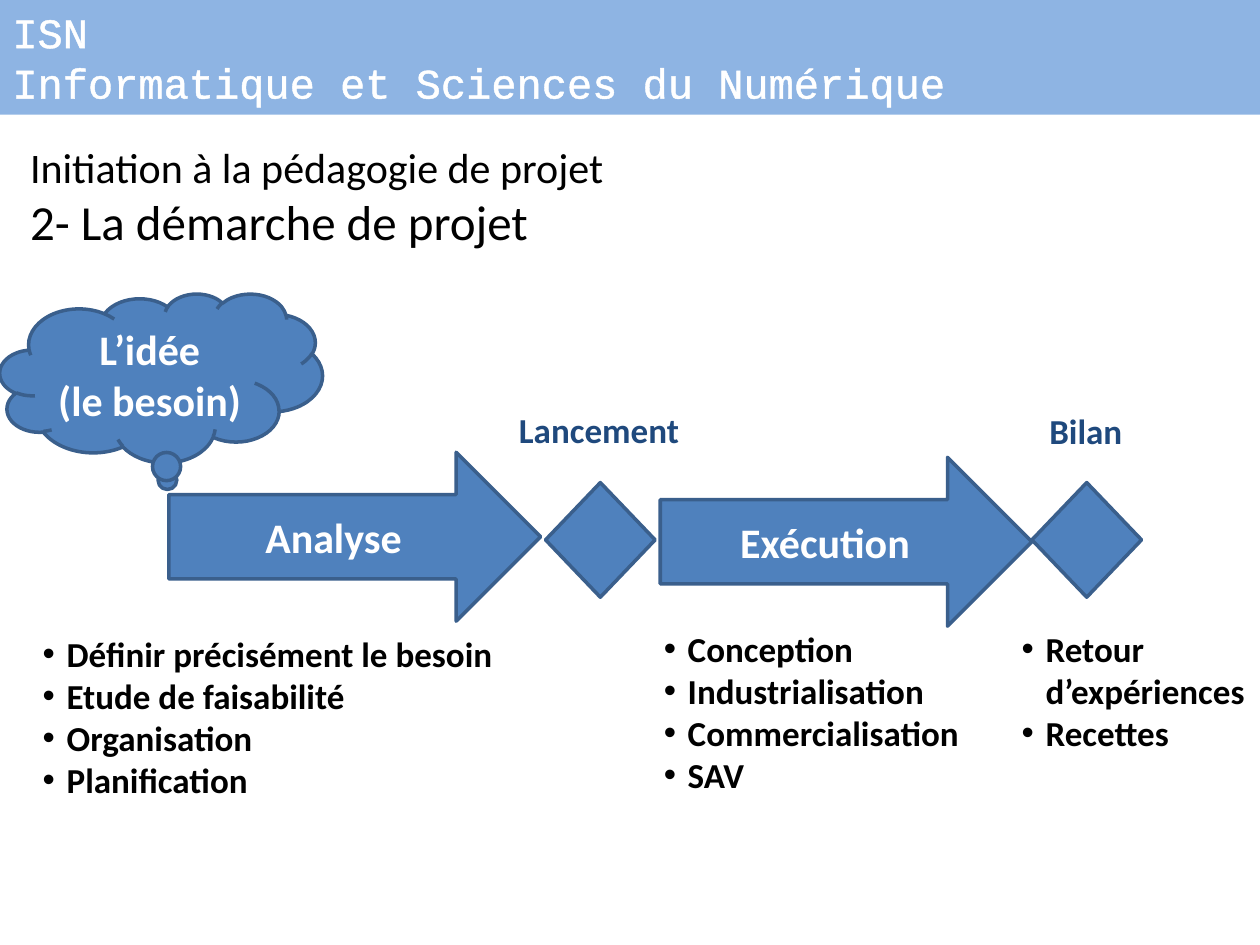
from dataclasses import dataclass
from lxml import etree
from pptx import Presentation
from pptx.dml.color import RGBColor
from pptx.enum.shapes import MSO_SHAPE
from pptx.enum.text import MSO_ANCHOR, MSO_AUTO_SIZE, PP_ALIGN
from pptx.oxml.ns import qn
from pptx.util import Inches, Pt

RECT = MSO_SHAPE.RECTANGLE
CLOUD = MSO_SHAPE.CLOUD_CALLOUT
ARROW = MSO_SHAPE.RIGHT_ARROW
GEM = MSO_SHAPE.DIAMOND
TOP = MSO_ANCHOR.TOP
MID = MSO_ANCHOR.MIDDLE
LEFT = PP_ALIGN.LEFT
MIDDLE = PP_ALIGN.CENTER
GROW = MSO_AUTO_SIZE.SHAPE_TO_FIT_TEXT


@dataclass(frozen=True)
class Theme:
    sans: str = "Calibri"
    mono: str = "Courier New"
    white: str = "FFFFFF"
    black: str = "000000"
    navy: str = "1F497D"
    blue: str = "4F81BD"
    edge: str = "3A5F8C"
    band: str = "8EB4E3"
    small: int = 20
    base: int = 24
    large: int = 28
    line: float = 2
    glow: float = 1.45
    indent: float = 0.19


class Board:
    cols, rows = 100, 75

    def __init__(self, deck, theme):
        self.deck = deck
        self.theme = theme
        self.slide = deck.slides.add_slide(deck.slide_layouts[6])

    def place(self, x, y, wide, high):
        col = self.deck.slide_width / self.cols
        row = self.deck.slide_height / self.rows
        return round(x * col), round(y * row), round(wide * col), round(high * row)

    def fill_text(self, frame, lines, color, size=None, font=None, bold=True, align=LEFT):
        for i, line in enumerate(lines):
            para = frame.paragraphs[0] if i == 0 else frame.add_paragraph()
            para.alignment = align
            text, points = line if isinstance(line, tuple) else (line, size)
            for j, part in enumerate(text.split("\n")):
                if j:
                    para.add_line_break()
                run = para.add_run()
                run.text = part
                run.font.name = font or self.theme.sans
                run.font.size = Pt(points)
                run.font.bold = bold
                run.font.color.rgb = RGBColor.from_string(color)

    def shape(self, kind, at, fill, edge=None):
        item = self.slide.shapes.add_shape(kind, *self.place(*at))
        item.shadow.inherit = False
        item.fill.solid()
        item.fill.fore_color.rgb = RGBColor.from_string(fill)
        if edge:
            item.line.color.rgb = RGBColor.from_string(edge)
            item.line.width = Pt(self.theme.line)
        else:
            item.line.fill.background()
        return item

    def banner(self, at, lines):
        look = self.theme
        frame = self.shape(RECT, at, look.band).text_frame
        frame.vertical_anchor = TOP
        self.fill_text(frame, lines, look.white, look.base, look.mono, False)
        for para in frame.paragraphs:
            for run in para.runs:
                line = etree.Element(qn("a:ln"), w=str(Pt(look.glow)))
                fill = etree.SubElement(line, qn("a:solidFill"))
                etree.SubElement(fill, qn("a:srgbClr"), val=look.white)
                run._r.get_or_add_rPr().insert(0, line)

    def step(self, kind, at, lines=()):
        look = self.theme
        item = self.shape(kind, at, look.blue, look.edge)
        item.text_frame.vertical_anchor = MID
        self.fill_text(item.text_frame, lines, look.white, look.base, align=MIDDLE)
        return item

    def text(self, at, lines, color, wrap=False, bold=True):
        frame = self.slide.shapes.add_textbox(*self.place(*at)).text_frame
        frame.word_wrap = wrap
        frame.auto_size = GROW
        self.fill_text(frame, lines, color, self.theme.small, bold=bold)
        return frame

    def bullets(self, at, lines):
        frame = self.text(at, lines, self.theme.black)
        gap = Inches(self.theme.indent)
        for para in frame.paragraphs:
            props = para._p.get_or_add_pPr()
            props.set("marL", str(gap))
            props.set("indent", str(-gap))
            etree.SubElement(props, qn("a:buFont"), typeface="Arial")
            etree.SubElement(props, qn("a:buChar"), char="•")


def main():
    deck = Presentation()
    deck.slide_width, deck.slide_height = Inches(10), Inches(7.5)
    look = Theme()
    board = Board(deck, look)

    board.banner((0, 0, 100, 9.1), ["ISN", "Informatique et Sciences du Numérique"])
    title = [("Initiation à la pédagogie de projet", look.base),
             ("2- La démarche de projet", look.large)]
    board.text((1.4, 10.7, 92.7, 9.8), title, look.black, wrap=True, bold=False)

    cloud = board.step(CLOUD, (0, 23.3, 25.6, 13.4), ["L’idée", "(le besoin)"])
    cloud.adjustments[0], cloud.adjustments[1] = 0.02, 0.63

    for x, y, name in ((13.4, 35.9, "Analyse"), (52.4, 36.3, "Exécution")):
        board.step(ARROW, (x, y, 29.5, 13.4), [name])
    for x in (43.3, 81.9):
        board.step(GEM, (x, 38.3, 8.7, 9.1))

    board.text((40.2, 31.9, 14.8, 4.4), ["Lancement"], look.navy)
    board.text((82.3, 32, 7.9, 4.4), ["Bilan"], look.navy)

    board.bullets((2.4, 49.7, 38.1, 17.8), [
        "Définir précisément le besoin", "Etude de faisabilité",
        "Organisation", "Planification"])
    board.bullets((51.7, 49.3, 25.7, 17.8), [
        "Conception", "Industrialisation", "Commercialisation", "SAV"])
    board.bullets((80.1, 49.3, 19.9, 11.1), ["Retour \nd’expériences", "Recettes"])

    deck.save("out.pptx")


if __name__ == "__main__":
    main()
